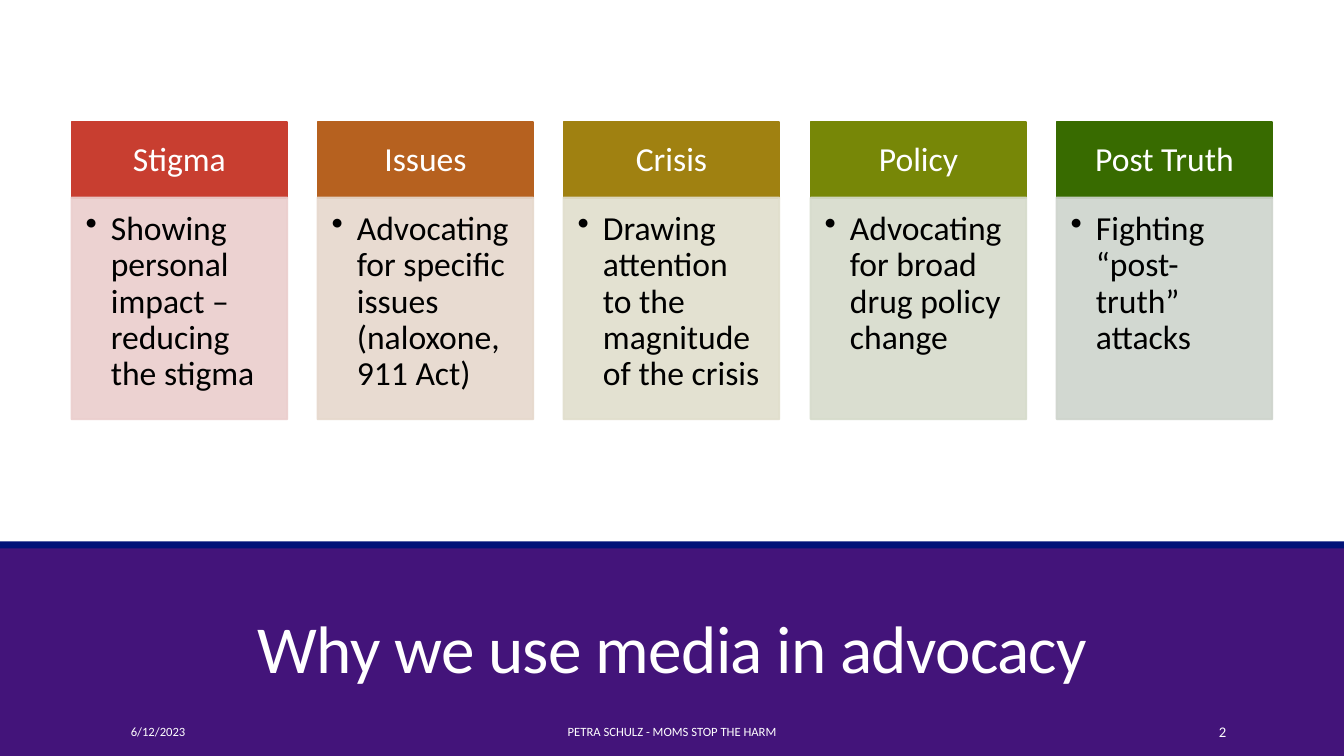
from lxml import etree
from pptx import Presentation
from pptx import util as u
from pptx.dml.color import RGBColor
from pptx.enum import shapes, text
from pptx.oxml.ns import qn

PX = 9144  # one hundred px to the inch

COLORS = {"band": "43147A", "strip": "011278", "white": "FFFFFF", "black": "000000"}

TOPICS = [
    ("Stigma", "C83E30", "EBCECD", "Showing personal impact – reducing the stigma"),
    ("Issues", "B6611F", "E6D8CC", "Advocating for specific issues (naloxone, 911 Act)"),
    ("Crisis", "A08111", "E1DECC", "Drawing attention to the magnitude of the crisis"),
    ("Policy", "778707", "D6DBCB", "Advocating for broad drug policy change"),
    ("Post Truth", "386B00", "CED4CC", "Fighting “post-truth” attacks"),
]
FIRST_LEFT, COLUMN_STEP, COLUMN_WIDTH = 71, 244.2, 214

LEFT, CENTER, RIGHT = text.PP_ALIGN.LEFT, text.PP_ALIGN.CENTER, text.PP_ALIGN.RIGHT
TOP, MIDDLE, BOTTOM = text.MSO_ANCHOR.TOP, text.MSO_ANCHOR.MIDDLE, text.MSO_ANCHOR.BOTTOM


class SlideBuilder:
    def __init__(self, slide, font="Calibri"):
        self.slide = slide
        self.font = font

    def bar(self, bounds, color, outlined=False, opacity=100):
        """Add a filled rectangle, with an outline of the same colour if asked."""
        box = self.slide.shapes.add_shape(
            shapes.MSO_SHAPE.RECTANGLE, *[side * PX for side in bounds])
        box.shadow.inherit = False
        fills = [box.fill]
        if outlined:
            box.line.width = u.Pt(1.25)
            fills.append(box.line.fill)
        else:
            box.line.fill.background()
        for fill in fills:
            fill.solid()
            fill.fore_color.rgb = RGBColor.from_string(color)
        if opacity < 100:
            for tint in box._element.spPr.iter(qn("a:srgbClr")):
                etree.SubElement(tint, qn("a:alpha"), val=str(opacity * 1000))
        return box

    def label(self, bounds, words, size, align, anchor=MIDDLE, **style):
        box = self.slide.shapes.add_textbox(*[side * PX for side in bounds])
        self.set_text(box, words, size, COLORS["white"], align, anchor, **style)

    def set_text(self, box, words, size, color, align, anchor,
                 insets=(10, 5, 10, 5), line_spacing=None, tracking=None, bullet=False):
        """Put one paragraph in a box; insets run left, top, right, bottom."""
        frame = box.text_frame
        frame.word_wrap = True
        frame.vertical_anchor = anchor
        (frame.margin_left, frame.margin_top,
         frame.margin_right, frame.margin_bottom) = [inset * PX for inset in insets]
        para = frame.paragraphs[0]
        para.alignment = align
        if line_spacing:
            para.line_spacing = line_spacing
        if bullet:
            props = para._p.get_or_add_pPr()
            props.set("marL", str(25 * PX))
            props.set("indent", str(-25 * PX))
            etree.SubElement(props, qn("a:buChar"), char="•")
        span = para.add_run()
        span.text = words
        if tracking:
            span._r.get_or_add_rPr().set("spc", str(round(tracking * 100)))
        para.font.name = self.font
        para.font.size = u.Pt(size)
        para.font.color.rgb = RGBColor.from_string(color)

    def topic(self, left, heading, strong, pale, point):
        """Add one column: a heading block above a pale block with a bullet."""
        head = self.bar((left, 121, COLUMN_WIDTH, 76), strong, outlined=True)
        self.set_text(head, heading, 24, COLORS["white"], CENTER, MIDDLE,
                      insets=(19, 11, 19, 11), line_spacing=0.9)
        body = self.bar((left, 196, COLUMN_WIDTH, 220), pale, outlined=True, opacity=90)
        self.set_text(body, point, 24, COLORS["black"], LEFT, TOP,
                      insets=(14, 14, 19, 21), line_spacing=0.9, bullet=True)


def main():
    deck = Presentation()
    deck.slide_width, deck.slide_height = 1333 * PX, 750 * PX
    page = SlideBuilder(deck.slides.add_slide(deck.slide_layouts[6]))

    page.bar((0, 542, 1333, 208), COLORS["band"])
    page.label((117, 574, 1100, 113), "Why we use media in advocacy", 48, CENTER, BOTTOM,
               line_spacing=0.85, tracking=-0.5)
    page.bar((0, 537, 1333, 7), COLORS["strip"])

    page.label((120, 706, 270, 40), "6/12/2023", 9, LEFT)
    page.label((403, 706, 527, 40), "PETRA SCHULZ - MOMS STOP THE HARM", 9, CENTER)
    page.label((1083, 706, 143, 40), "2", 10.5, RIGHT)

    for column, topic in enumerate(TOPICS):
        page.topic(round(FIRST_LEFT + column * COLUMN_STEP), *topic)

    deck.save("out.pptx")


if __name__ == "__main__":
    main()
